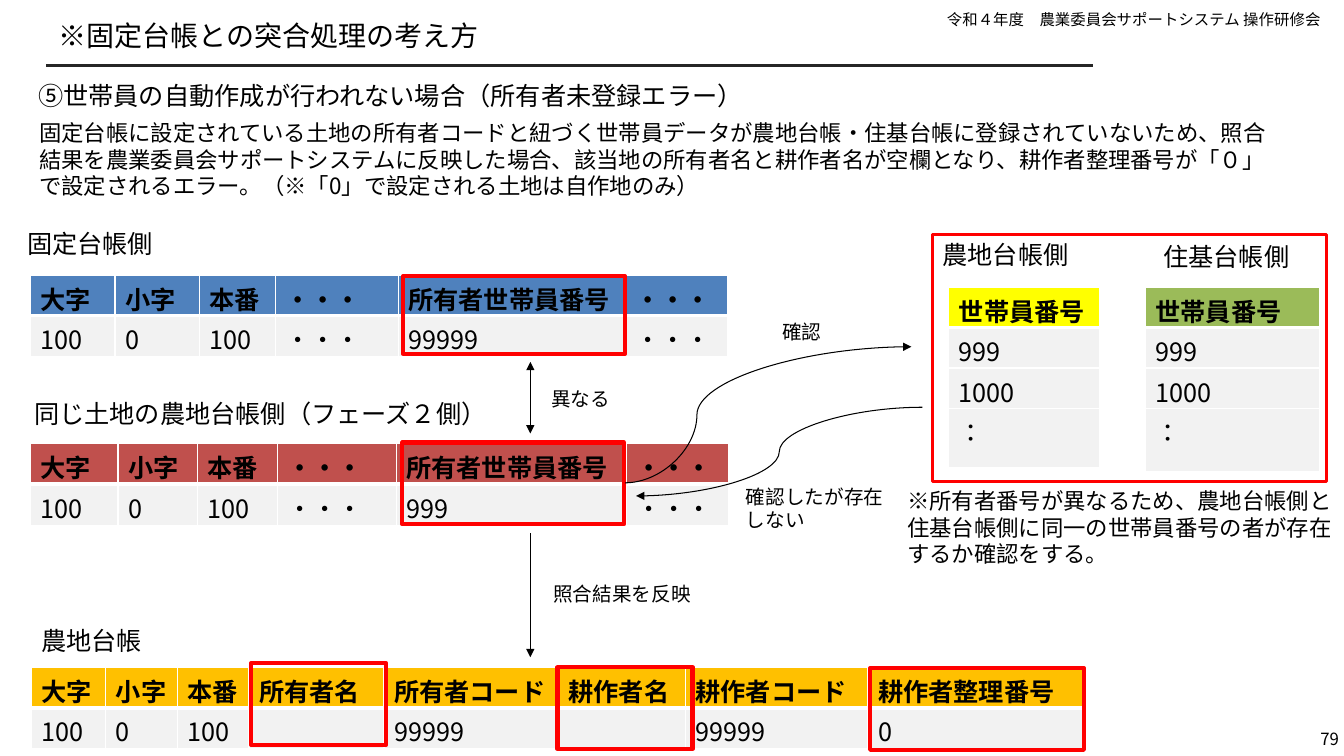
import pptx
import pptx.util
import pptx.dml.color
import pptx.enum.shapes
import pptx.enum.text
import pptx.oxml
import pptx.oxml.ns
from lxml import etree

Inches, Pt = pptx.util.Inches, pptx.util.Pt
RGBColor = pptx.dml.color.RGBColor
ALIGN, ANCHOR = pptx.enum.text.PP_ALIGN, pptx.enum.text.MSO_ANCHOR
CONNECTOR = pptx.enum.shapes.MSO_CONNECTOR
qn = pptx.oxml.ns.qn

FONT = "Noto Sans CJK JP"
BLACK = RGBColor(0x00, 0x00, 0x00)
RULE_GRAY = RGBColor(0x26, 0x26, 0x26)
RED = RGBColor(0xFF, 0x00, 0x00)
BLUE = RGBColor(0x4F, 0x81, 0xBD)
BRICK = RGBColor(0xC0, 0x50, 0x4D)
AMBER = RGBColor(0xFF, 0xC0, 0x00)
YELLOW = RGBColor(0xFF, 0xFF, 0x00)
GREEN = RGBColor(0x9B, 0xBB, 0x59)
BODY_GRAY = RGBColor(0xF2, 0xF2, 0xF2)

# Texts: left, top, width, height, size, wording
TEXTS = [
    (0.28, 0.75, 7.39, 0.4, 18, "⑤世帯員の自動作成が行われない場合（所有者未登録エラー）"),
    (0.29, 1.13, 12.44, 0.91, 16,
     "固定台帳に設定されている土地の所有者コードと紐づく世帯員データが農地台帳・住基台帳に登録されていないため、"
     "照合結果を農業委員会サポートシステムに反映した場合、該当地の所有者名と耕作者名が空欄となり、"
     "耕作者整理番号が「０」で設定されるエラー。（※「0」で設定される土地は自作地のみ）"),
    (0.17, 2.22, 1.57, 0.4, 18, "固定台帳側"),
    (0.24, 3.9, 5.12, 0.4, 18, "同じ土地の農地台帳側（フェーズ２側）"),
    (0.31, 6.15, 2.57, 0.4, 18, "農地台帳"),
    (9.25, 2.33, 1.57, 0.4, 18, "農地台帳側"),
    (11.44, 2.34, 1.57, 0.4, 18, "住基台帳側"),
    (8.9, 4.78, 4.62, 0.91, 16,
     "※所有者番号が異なるため、農地台帳側と住基台帳側に同一の世帯員番号の者が存在するか確認をする。"),
    (5.37, 3.79, 1.1, 0.34, 14, "異なる"),
    (5.39, 5.72, 1.67, 0.34, 14, "照合結果を反映"),
    (7.3, 4.76, 1.69, 0.57, 14, "確認したが存在しない"),
    (7.66, 3.12, 1.1, 0.34, 14, "確認"),
]

# Ledgers: left, top, header colour, column widths, row heights, rows
LAND_HEADER = ["大字", "小字", "本番", "・・・", "所有者世帯員番号", "・・・"]
MEMBER_ROWS = [["世帯員番号"], ["999"], ["1000"], ["："]]
LEDGERS = [
    (0.3, 2.73, BLUE, [0.84, 0.84, 0.75, 1.22, 2.25, 1.02], [0.4, 0.41],
     [LAND_HEADER, ["100", "0", "100", "・・・", "99999", "・・・"]]),
    (0.3, 4.4, BRICK, [0.87, 0.79, 0.79, 1.18, 2.28, 1.02], [0.4, 0.41],
     [LAND_HEADER, ["100", "0", "100", "・・・", "999", "・・・"]]),
    (0.31, 6.62, AMBER, [0.74, 0.71, 0.71, 1.34, 1.73, 1.26, 1.81, 2.13], [0.4, 0.41],
     [["大字", "小字", "本番", "所有者名", "所有者コード", "耕作者名", "耕作者コード", "耕作者整理番号"],
      ["100", "0", "100", "", "99999", "", "99999", "0"]]),
    (9.41, 2.85, YELLOW, [1.5], [0.4, 0.4, 0.4, 0.59], MEMBER_ROWS),
    (11.36, 2.85, GREEN, [1.73], [0.4, 0.4, 0.4, 0.63], MEMBER_ROWS),
]

# Red frames: left, top, width, height, line width
FRAMES = [
    (4, 2.74, 2.2, 0.77, 3),
    (3.99, 4.39, 2.2, 0.81, 3),
    (9.25, 2.33, 3.91, 2.45, 2),
    (2.49, 6.58, 1.34, 0.81, 3),
    (5.53, 6.62, 1.34, 0.81, 3),
    (8.63, 6.63, 2.12, 0.81, 3),
]

# Lines: kind, start, end, colour, width, arrow ends, bend position
LINES = [
    (CONNECTOR.STRAIGHT, (0.46, 0.65), (10.84, 0.65), RULE_GRAY, 1.5, [], None),
    (CONNECTOR.STRAIGHT, (5.26, 3.59), (5.26, 4.3), BLACK, 0.75, ["headEnd", "tailEnd"], None),
    (CONNECTOR.STRAIGHT, (5.26, 5.29), (5.26, 6.52), BLACK, 0.75, ["tailEnd"], None),
    (CONNECTOR.CURVE, (6.2, 4.79), (9.04, 3.44), BLACK, 0.75, ["tailEnd"], 25100),
    (CONNECTOR.CURVE, (9.15, 4.04), (6.31, 4.92), BLACK, 0.75, ["tailEnd"], 50000),
]

deck = pptx.Presentation()
deck.slide_width, deck.slide_height = Inches(13.33), Inches(7.5)
slide = deck.slides.add_slide(deck.slide_layouts[6])


def apply(target, formats):
    for name, value in formats.items():
        setattr(target, name, value)


def write(frame, wording, size, bold=False, align=ALIGN.LEFT):
    paragraph = frame.paragraphs[0]
    paragraph.alignment = align
    run = paragraph.add_run()
    run.text = wording
    apply(run.font, {"name": FONT, "size": Pt(size), "bold": bold})
    run.font.color.rgb = BLACK
    etree.SubElement(run.font._element, qn("a:ea"), typeface=FONT)


def add_text(left, top, width, height, size, wording, align=ALIGN.LEFT, **formats):
    frame = slide.shapes.add_textbox(*map(Inches, (left, top, width, height))).text_frame
    apply(frame, {"word_wrap": True, **formats})
    write(frame, wording, size, align=align)


def add_borders(cell, row):
    widths = {"lnL": 1, "lnR": 1, "lnT": 3 if row == 1 else 1, "lnB": 3 if row == 0 else 1}
    for side, width in widths.items():
        border = etree.SubElement(cell._tc.get_or_add_tcPr(), qn("a:" + side), w=str(Pt(width)))
        paint = etree.SubElement(border, qn("a:solidFill"))
        etree.SubElement(paint, qn("a:srgbClr"), val="FFFFFF")


def add_ledger(left, top, header_color, widths, heights, rows):
    ledger = slide.shapes.add_table(
        len(rows), len(widths), Inches(left), Inches(top),
        Inches(sum(widths)), Inches(sum(heights))).table
    for column, width in zip(ledger.columns, widths):
        column.width = Inches(width)
    for r, entries in enumerate(rows):
        ledger.rows[r].height = Inches(heights[r])
        for c, entry in enumerate(entries):
            cell = ledger.cell(r, c)
            add_borders(cell, r)
            cell.fill.solid()
            cell.fill.fore_color.rgb = BODY_GRAY if r else header_color
            if entry:
                write(cell.text_frame, entry, 18, bold=r == 0)


def add_frame(left, top, width, height, weight):
    frame = slide.shapes.add_shape(
        pptx.enum.shapes.MSO_SHAPE.RECTANGLE, *map(Inches, (left, top, width, height)))
    frame.shadow.inherit = False
    frame.fill.background()
    frame.line.color.rgb = RED
    frame.line.width = Pt(weight)


def add_line(kind, start, end, color, weight, arrow_ends, bend):
    line = slide.shapes.add_connector(kind, *map(Inches, start + end))
    line.line.color.rgb = color
    line.line.width = Pt(weight)
    for arrow_end in arrow_ends:
        etree.SubElement(line.line._get_or_add_ln(), qn("a:" + arrow_end), type="triangle")
    properties = line._element.spPr
    etree.SubElement(properties, qn("a:effectLst"))
    if bend:
        guides = properties.find(qn("a:prstGeom")).get_or_add_avLst()
        etree.SubElement(guides, qn("a:gd"), name="adj1", fmla=f"val {bend}")


# Running header, page number and title
NO_MARGIN = dict(margin_left=0, margin_right=0, margin_top=0, margin_bottom=0,
                 vertical_anchor=ANCHOR.MIDDLE)
add_text(0.13, 0.05, 13.07, 0.29, 11, "令和４年度　農業委員会サポートシステム 操作研修会", ALIGN.RIGHT)
add_text(12.73, 7.21, 0.55, 0.24, 12, "79", ALIGN.RIGHT, **NO_MARGIN)
add_text(0.46, 0.05, 10.38, 0.6, 20, "※固定台帳との突合処理の考え方",
         **{**NO_MARGIN, "margin_left": Inches(0.12)})

# Ledgers, then the marks and wording over them
for add, parts in ((add_ledger, LEDGERS), (add_frame, FRAMES), (add_line, LINES), (add_text, TEXTS)):
    for part in parts:
        add(*part)

deck.save("out.pptx")
